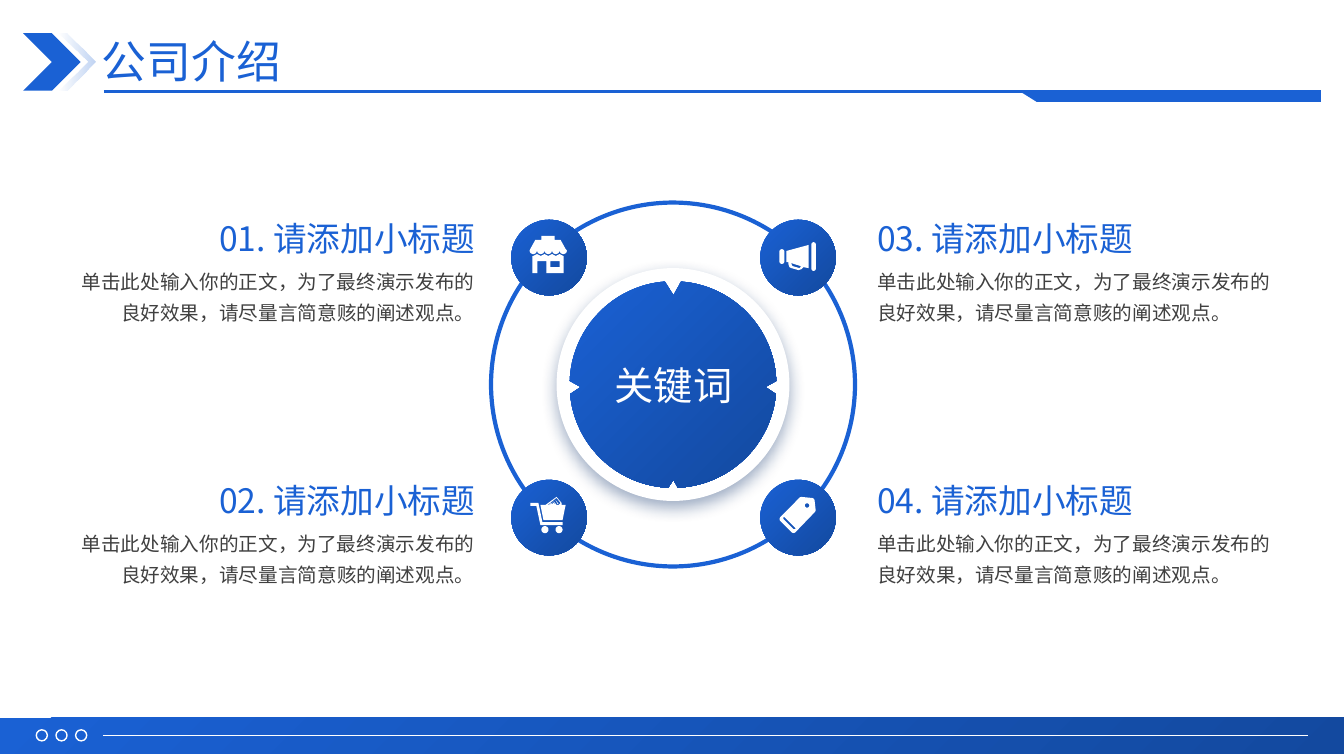
import math
import lxml.etree
import pptx
import pptx.dml.color
import pptx.enum.shapes
import pptx.enum.text
import pptx.oxml.ns
import pptx.util

Inches = pptx.util.Inches
qn = pptx.oxml.ns.qn
SHAPE = pptx.enum.shapes.MSO_SHAPE
ALIGN = pptx.enum.text.PP_ALIGN
FONT = "Noto Sans CJK SC"
BLUE, NAVY, WHITE, GREY = "1A61D4", "13499F", "FFFFFF", "404040"


def paint(shape, fill=None, angle=45, line=None, width=1):
    """Fill with one colour, or with a gradient when two are given."""
    shape.shadow.inherit = False
    if fill is None:
        shape.fill.background()
    elif isinstance(fill, tuple):
        shape.fill.gradient()
        shape.fill.gradient_angle = (360 - angle) % 360
        for stop, colour, place in zip(shape.fill.gradient_stops, fill, (0, 1)):
            stop.color.rgb = pptx.dml.color.RGBColor.from_string(colour)
            stop.position = place
    else:
        shape.fill.solid()
        shape.fill.fore_color.rgb = pptx.dml.color.RGBColor.from_string(fill)
    if line:
        shape.line.color.rgb = pptx.dml.color.RGBColor.from_string(line)
        shape.line.width = pptx.util.Pt(width)
    else:
        shape.line.fill.background()


def arc(x, y, radius, start=0, end=360):
    """Points along an arc, angles in degrees clockwise from the right."""
    steps = 24
    angles = [math.radians(start + (end - start) * i / steps) for i in range(steps + 1)]
    return [(x + radius * math.cos(a), y + radius * math.sin(a)) for a in angles]


deck = pptx.Presentation()
deck.slide_width, deck.slide_height = Inches(13.33), Inches(7.5)
page = deck.slides.add_slide(deck.slide_layouts[6])

# Header chevron, footer band and dots, ring, badges
shapes = [
    (SHAPE.CHEVRON, 0.23, 0.33, 0.57, 0.57, dict(fill=BLUE)),
    (SHAPE.RECTANGLE, 0, 7.12, 13.33, 0.36, dict(fill=(BLUE, NAVY))),
    (SHAPE.OVAL, 4.87, 2.01, 3.61, 3.61, dict(line=BLUE, width=3)),
]
for i in range(3):
    shapes.append((SHAPE.OVAL, 0.36 + 0.195 * i, 7.24, 0.11, 0.11, dict(line=WHITE)))
for left in (5.07, 7.54):
    for top in (2.18, 4.76):
        shapes.append((SHAPE.OVAL, left, top, 0.75, 0.75, dict(fill=(BLUE, NAVY))))
for kind, left, top, width, height, look in shapes:
    shape = page.shapes.add_shape(kind, Inches(left), Inches(top), Inches(width), Inches(height))
    paint(shape, **look)

# Header and footer rules
for left, right, y, colour, width in [(1.03, 13.1, 0.91, BLUE, 2.25), (1.02, 12.97, 7.3, WHITE, 0.5)]:
    rule = page.shapes.add_connector(
        pptx.enum.shapes.MSO_CONNECTOR.STRAIGHT, Inches(left), Inches(y), Inches(right), Inches(y))
    rule.line.color.rgb = pptx.dml.color.RGBColor.from_string(colour)
    rule.line.width = pptx.util.Pt(width)
    lxml.etree.SubElement(rule._element.spPr, qn("a:effectLst"))

# White plate with a soft shadow
plate = page.shapes.add_shape(SHAPE.OVAL, Inches(5.52), Inches(2.66), Inches(2.31), Inches(2.31))
paint(plate, WHITE)
effects = plate._element.spPr.find(qn("a:effectLst"))
shadow = lxml.etree.SubElement(effects, qn("a:outerShdw"), blurRad="144780", dist="60960",
                               dir="5400000", algn="t", rotWithShape="0")
tint = lxml.etree.SubElement(shadow, qn("a:srgbClr"), val="0D316A")
lxml.etree.SubElement(tint, qn("a:alpha"), val="40000")

# Outlines, each a list of contours
echo = [[(0.58, 0.33), (0.67, 0.33), (0.95, 0.61), (0.67, 0.9), (0.58, 0.9), (0.87, 0.61)]]
tab = [[(10.12, 0.91), (13.1, 0.91), (13.1, 1.01), (10.28, 1.01)]]

hub = (6.675, 3.815, 1.025)
disc = [[(6.68, 2.93)] + arc(*hub, -85.5, -2) + [(7.59, 3.84)] + arc(*hub, 5.3, 87.3)
        + [(6.68, 4.76)] + arc(*hub, 92.7, 174.7) + [(5.76, 3.84)] + arc(*hub, 182, 265.5)]

scallops, wave = [], []
for i in range(5):
    x = 5.587 - 0.0745 * i
    scallops += arc(x, 2.485, 0.036, 0, 180)
    wave += [(x, 2.54), (x - 0.037, 2.52)]
wave.pop()
shop = [
    [(5.46, 2.59), (5.46, 2.65), (5.55, 2.65), (5.55, 2.59)],
    wave + [(5.28, 2.54), (5.28, 2.71), (5.33, 2.71), (5.33, 2.59),
            (5.42, 2.59), (5.42, 2.71), (5.59, 2.71), (5.59, 2.54)],
    [(5.37, 2.34), (5.5, 2.34), (5.5, 2.38), (5.56, 2.38), (5.61, 2.47)] + scallops
    + [(5.26, 2.47), (5.31, 2.38), (5.37, 2.38)],
]
cart = [
    [(5.38, 5.18), (5.58, 5.18), (5.58, 5.21), (5.36, 5.21), (5.32, 5.02),
     (5.26, 5.02), (5.26, 4.99), (5.34, 4.99)],
    arc(5.405, 5.255, 0.035), arc(5.545, 5.255, 0.035),
    [(5.39, 5.16), (5.36, 5.01), (5.41, 5.01), (5.52, 4.93), (5.57, 4.99),
     (5.57, 5.01), (5.61, 5.01), (5.58, 5.16)],
    [(5.43, 5.01), (5.45, 5.01), (5.45, 5), (5.46, 5.01), (5.46, 4.99), (5.48, 5.01),
     (5.47, 4.99), (5.49, 5.01), (5.48, 4.98), (5.51, 5.01), (5.49, 4.97),
     (5.52, 5.01), (5.54, 5.01), (5.56, 4.99), (5.52, 4.94)],
    [(5.54, 5), (5.51, 4.96), (5.53, 5)],
]
tag = [
    arc(8.05, 4.97, 0.03, -80, -10) + arc(8.06, 5.06, 0.03, 0, 45)
    + arc(7.87, 5.26, 0.028, 45, 135) + arc(7.76, 5.15, 0.028, 135, 225)
    + arc(7.95, 4.96, 0.03, 225, 280),
    [(7.89, 5.25), (7.87, 5.25), (7.77, 5.15), (7.77, 5.13), (7.78, 5.13), (7.89, 5.24)],
    arc(8.005, 5.015, 0.022),
]
horn = [
    [(7.85, 2.61), (7.85, 2.62), (7.86, 2.64), (7.93, 2.66), (7.94, 2.65), (7.94, 2.64)],
    arc(7.755, 2.497, 0.025, 180, 360) + arc(7.755, 2.593, 0.025, 0, 180),
    [(8.02, 2.43), (8.02, 2.66), (7.97, 2.65), (7.95, 2.67), (7.92, 2.68), (7.85, 2.66),
     (7.83, 2.65), (7.82, 2.62), (7.82, 2.6), (7.8, 2.6), (7.8, 2.49)],
    arc(8.07, 2.425, 0.022, 180, 360) + arc(8.07, 2.665, 0.022, 0, 180),
]
outlines = [(echo, (BLUE, BLUE), 0), (tab, BLUE, 0), (disc, (BLUE, NAVY), 45)]
outlines += [(icon, WHITE, 0) for icon in (shop, cart, tag, horn)]
for contours, fill, angle in outlines:
    builder = None
    for contour in contours:
        points = [(Inches(x), Inches(y)) for x, y in contour]
        if builder is None:
            builder = page.shapes.build_freeform(*points[0])
        else:
            builder.move_to(*points[0])
        builder.add_line_segments(points[1:], close=True)
    outline = builder.convert_to_shape()
    paint(outline, fill, angle)
    if contours is echo:
        for colour, alpha in zip(outline._element.spPr.iter(qn("a:srgbClr")), ("0", "28000")):
            lxml.etree.SubElement(colour, qn("a:alpha"), val=alpha)

# Texts: wording, left, top, width, height, size, colour, alignment, line spacing, wrap
BODY = "单击此处输入你的正文，为了最终演示发布的良好效果，请尽量言简意赅的阐述观点。"
texts = [
    ("公司介绍", 0.91, 0.36, 3.77, 0.55, 32, BLUE, ALIGN.LEFT, 0.9, True),
    ("关键词", 6.09, 3.58, 1.18, 0.47, 28, WHITE, ALIGN.CENTER, 1, False),
]
for column, (edge, align) in enumerate([(4.71, ALIGN.RIGHT), (8.7, ALIGN.LEFT)]):
    for row, top in enumerate((2.16, 4.76)):
        heading = f"0{column * 2 + row + 1}. 请添加小标题"
        for words, drop, width, height, size, colour, spacing, wrap in [
            (heading, 0, 2.67, 0.4, 24, BLUE, 1, False),
            (BODY, 0.45, 3.98, 0.59, 14, GREY, 1.3, True),
        ]:
            left = edge - width if align == ALIGN.RIGHT else edge
            texts.append((words, left, top + drop, width, height, size, colour, align, spacing, wrap))
for words, left, top, width, height, size, colour, align, spacing, wrap in texts:
    box = page.shapes.add_textbox(Inches(left), Inches(top), Inches(width), Inches(height))
    frame = box.text_frame
    frame.text = words
    frame.word_wrap = wrap
    if size == 32:
        frame.vertical_anchor = pptx.enum.text.MSO_ANCHOR.MIDDLE
    else:
        frame.margin_left = frame.margin_right = frame.margin_top = frame.margin_bottom = 0
        frame.auto_size = pptx.enum.text.MSO_AUTO_SIZE.SHAPE_TO_FIT_TEXT
    para = frame.paragraphs[0]
    para.alignment = align
    para.line_spacing = spacing
    span = para.runs[0]
    span.font.size = pptx.util.Pt(size)
    span.font.color.rgb = pptx.dml.color.RGBColor.from_string(colour)
    span.font.name = FONT
    lxml.etree.SubElement(span.font._element, qn("a:ea"), typeface=FONT)

deck.save("out.pptx")
